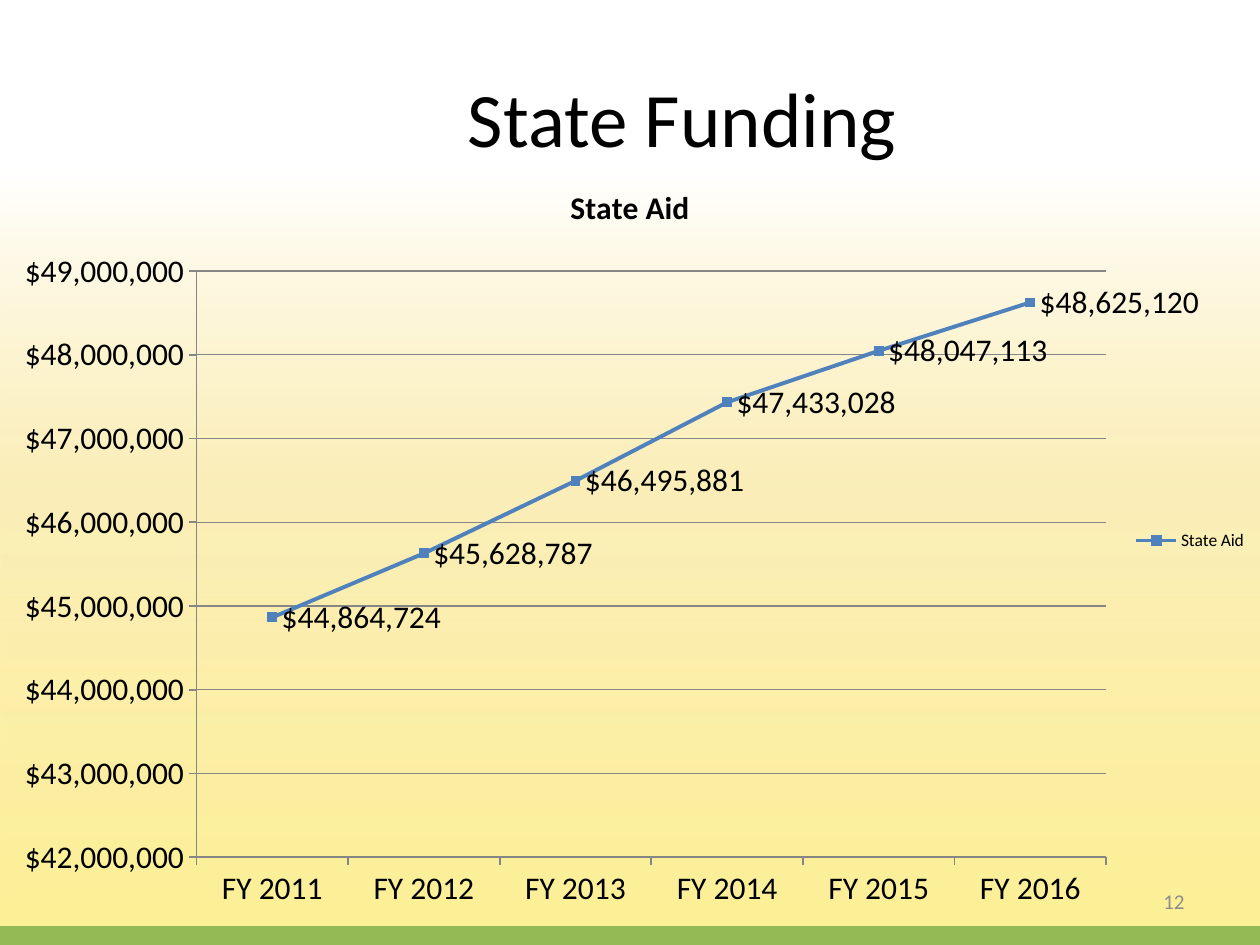
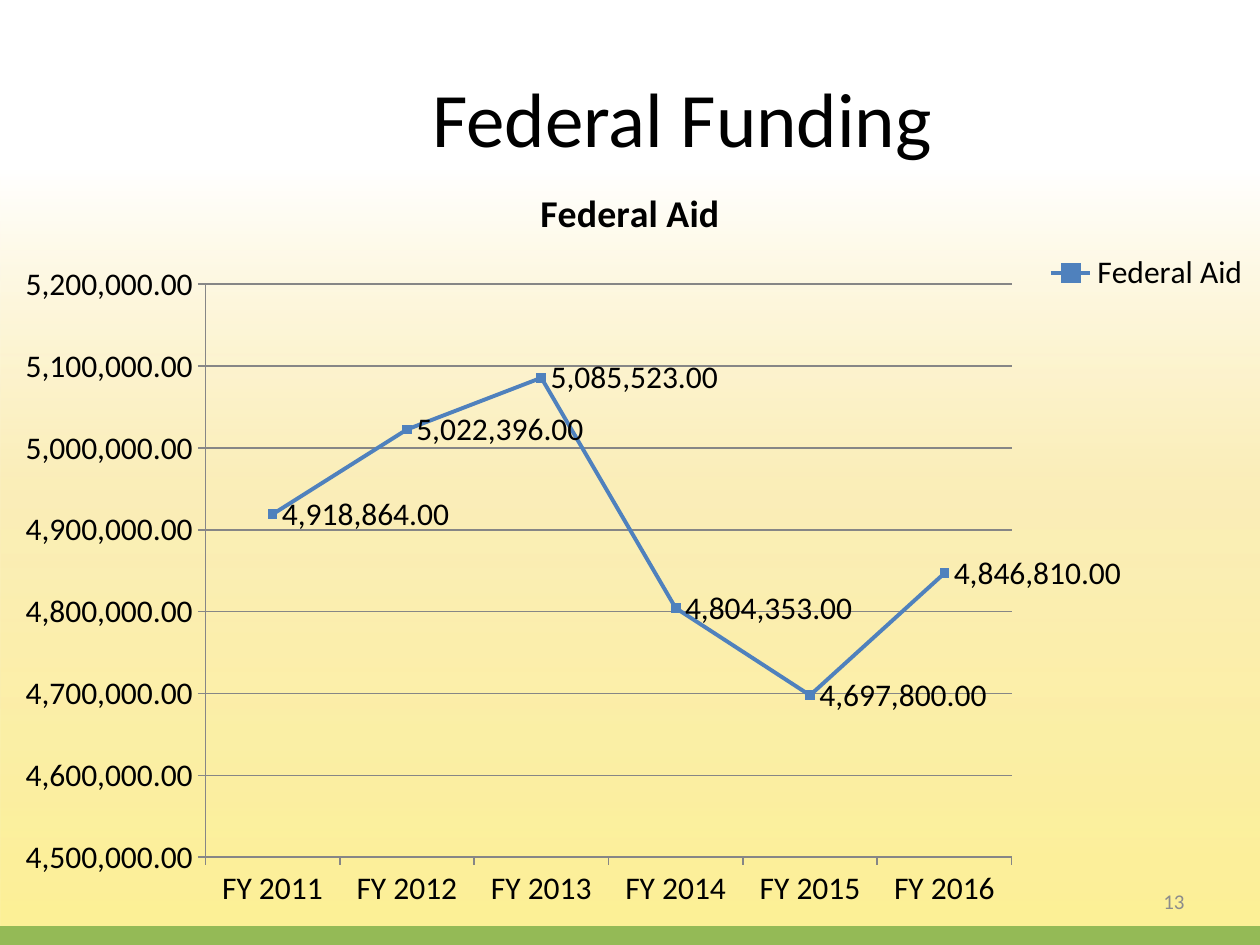
from lxml import etree
from pptx import Presentation
from pptx.chart.data import CategoryChartData
from pptx.dml.color import RGBColor
from pptx.enum.chart import (XL_CHART_TYPE, XL_LABEL_POSITION as LABEL_POS, XL_LEGEND_POSITION as LEGEND_POS,
                             XL_MARKER_STYLE, XL_TICK_MARK as TICK)
from pptx.enum.shapes import MSO_SHAPE
from pptx.enum.text import MSO_ANCHOR, PP_ALIGN
from pptx.oxml import parse_xml
from pptx.oxml.ns import nsdecls, qn
from pptx.util import Inches, Pt

WIDTH, HEIGHT = Inches(10), Inches(7.5)
FONT = "Calibri"
BLACK, GRAY, AXIS_GRAY, GREEN, BLUE = "000000", "8C8C8C", "868686", "94BA56", "4F81BD"
# position %, colour, opacity %, from the bottom of the slide upwards
GLOW = [(0, "FCEF8E", 94), (49, "FAEAA8", 80), (82, "FFFFFF", 100)]

# left, top, width, height as shares of the slide
FULL_BOX = (0, 0, 1, 1)
BAND_BOX = (0, 0.98, 1, 0.02)
TITLE_BOX = (0.133, 0.04, 0.817, 0.167)
NUMBER_BOX = (0.717, 0.927, 0.233, 0.053)
CHART_BOX = (0, 0.167, 1, 0.81)

YEARS = [f"FY {year}" for year in range(2011, 2017)]


def rgb(color):
    return RGBColor.from_string(color)


def place(box):
    x, y, w, h = box
    return int(x * WIDTH), int(y * HEIGHT), int(w * WIDTH), int(h * HEIGHT)


def style_font(font, size, color=BLACK, bold=False):
    font.name, font.size, font.bold = FONT, Pt(size), bold
    font.color.rgb = rgb(color)


def fill_gradient(sp):
    stops = "".join(
        f'<a:gs pos="{pos * 1000}"><a:srgbClr val="{color}">'
        f'<a:alpha val="{alpha * 1000}"/></a:srgbClr></a:gs>' for pos, color, alpha in GLOW)
    gradient = parse_xml(f'<a:gradFill {nsdecls("a")} rotWithShape="1"><a:gsLst>{stops}</a:gsLst>'
                         '<a:lin ang="16200000" scaled="0"/></a:gradFill>')
    sp.fill.background()
    old = sp._element.spPr.find(qn("a:noFill"))
    old.getparent().replace(old, gradient)


def build_backdrop(slide, layout):
    """Draw the glow and the bottom band, then move them behind everything on the layout."""
    for index, box in enumerate((FULL_BOX, BAND_BOX)):
        sp = slide.shapes.add_shape(MSO_SHAPE.RECTANGLE, *place(box))
        sp.shadow.inherit = False
        sp.line.fill.background()
        if box is FULL_BOX:
            fill_gradient(sp)
        else:
            sp.fill.solid()
            sp.fill.fore_color.rgb = rgb(GREEN)
        layout.shapes._spTree.insert(2 + index, sp._element)


def add_title(slide, text):
    title = slide.shapes.title
    title.left, title.top, title.width, title.height = place(TITLE_BOX)
    tf = title.text_frame
    tf.text, tf.vertical_anchor = text, MSO_ANCHOR.MIDDLE
    p = tf.paragraphs[0]
    p.alignment = PP_ALIGN.CENTER
    style_font(p.runs[0].font, 44)


def add_number(slide, number):
    tf = slide.shapes.add_textbox(*place(NUMBER_BOX)).text_frame
    tf.word_wrap, tf.vertical_anchor = True, MSO_ANCHOR.MIDDLE
    tf.text = str(number)
    p = tf.paragraphs[0]
    p.alignment = PP_ALIGN.RIGHT
    style_font(p.runs[0].font, 12, GRAY)


def set_layout(parent, index, box, inner=False):
    """Fix a chart part at shares of the chart's size."""
    old = parent.find(qn("c:layout"))
    if old is not None:
        parent.remove(old)
    layout = etree.Element(qn("c:layout"))
    manual = etree.SubElement(layout, qn("c:manualLayout"))
    settings = [("layoutTarget", "inner")] if inner else []
    settings += [("xMode", "edge"), ("yMode", "edge"), *zip("xywh", box)]
    for tag, value in settings:
        etree.SubElement(manual, qn(f"c:{tag}")).set("val", str(value))
    parent.insert(index, layout)


def style_axis(axis, line_width):
    axis.major_tick_mark, axis.minor_tick_mark = TICK.OUTSIDE, TICK.NONE
    style_font(axis.tick_labels.font, 18)
    axis.format.line.color.rgb = rgb(AXIS_GRAY)
    axis.format.line.width = Pt(line_width)


def style_series(series, number_format):
    series.smooth = False
    series.format.line.color.rgb = rgb(BLUE)
    series.format.line.width = Pt(2.25)
    marker = series.marker
    marker.style, marker.size = XL_MARKER_STYLE.SQUARE, 5
    marker.format.fill.solid()
    marker.format.fill.fore_color.rgb = rgb(BLUE)
    marker.format.line.color.rgb = rgb(BLUE)
    labels = series.data_labels
    labels.show_value, labels.position = True, LABEL_POS.RIGHT
    labels.number_format, labels.number_format_is_linked = number_format, False
    style_font(labels.font, 18)


def add_aid_chart(slide, name, values, number_format, scale, plot_box,
                  title_size, legend_size, grid_width, legend_box=None):
    data = CategoryChartData(number_format=number_format)
    data.categories = YEARS
    data.add_series(name, values)
    chart = slide.shapes.add_chart(XL_CHART_TYPE.LINE_MARKERS, *place(CHART_BOX), data).chart
    style_font(chart.font, legend_size)

    chart.has_title = True
    tf = chart.chart_title.text_frame
    tf.text = name
    style_font(tf.paragraphs[0].runs[0].font, title_size, bold=True)

    chart.has_legend = True
    legend = chart.legend
    legend.position, legend.include_in_layout = LEGEND_POS.RIGHT, False
    style_font(legend.font, legend_size)
    if legend_box:
        set_layout(legend._element, 1, legend_box)

    axis = chart.value_axis
    axis.minimum_scale, axis.maximum_scale, axis.major_unit = scale
    axis.tick_labels.number_format = number_format
    axis.tick_labels.number_format_is_linked = False
    axis.has_major_gridlines = True
    grid = axis.major_gridlines.format.line
    grid.color.rgb, grid.width = rgb(AXIS_GRAY), Pt(grid_width)
    for axis in (chart.value_axis, chart.category_axis):
        style_axis(axis, 1)

    plot = chart.plots[0]
    plot.vary_by_categories = False
    style_series(plot.series[0], number_format)
    set_layout(chart._chartSpace.chart.plotArea, 0, plot_box, inner=True)


FUNDING = [
    ("State Funding", dict(
        name="State Aid", number_format='"$"#,##0',
        values=[44864724, 45628787, 46495881, 47433028, 48047113, 48625120],
        scale=(42_000_000, 49_000_000, 1_000_000), plot_box=(0.156, 0.148, 0.722, 0.766),
        title_size=18, legend_size=10, grid_width=0.75)),
    ("Federal Funding", dict(
        name="Federal Aid", number_format="#,##0.00",
        values=[4918864, 5022396, 5085523, 4804353, 4697800, 4846810],
        scale=(4_500_000, 5_200_000, 100_000), plot_box=(0.163, 0.165, 0.64, 0.749),
        title_size=21.6, legend_size=18, grid_width=1, legend_box=(0.825, 0.11, 0.17, 0.08))),
]


def main():
    prs = Presentation()
    prs.slide_width, prs.slide_height = WIDTH, HEIGHT
    layout = prs.slide_layouts[5]
    for number, (title, chart) in enumerate(FUNDING, start=12):
        slide = prs.slides.add_slide(layout)
        add_title(slide, title)
        add_number(slide, number)
        add_aid_chart(slide, **chart)
    build_backdrop(slide, layout)
    prs.save("out.pptx")


if __name__ == "__main__":
    main()
